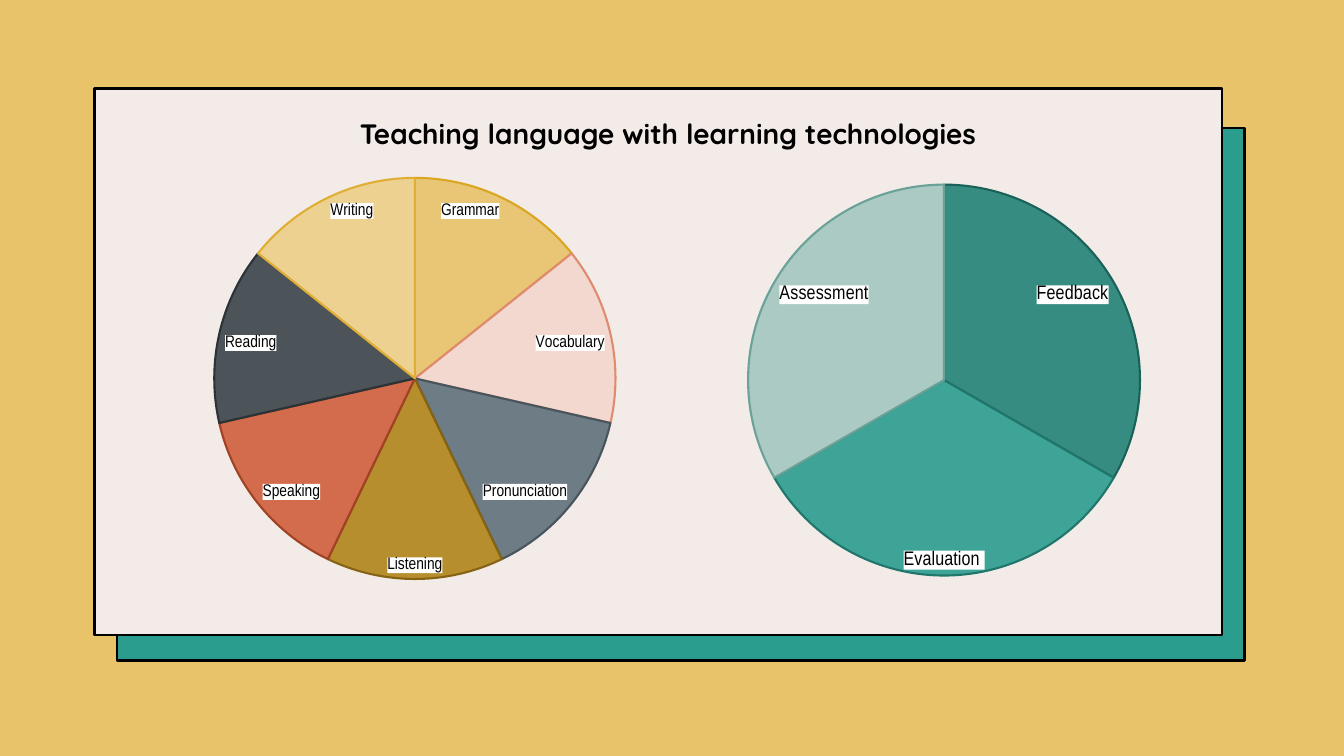
"""Build a slide with two pie charts on a shadowed card."""
import pptx
import pptx.chart.data
import pptx.dml.color
import pptx.enum.chart
import pptx.enum.shapes
import pptx.enum.text
import pptx.oxml
import pptx.oxml.ns
import pptx.util
from pptx.util import Inches

BLACK = "000000"
NARROW = "Arial Narrow"
SKILLS = [
    ("Grammar", "E9C369", "DAA520"),
    ("Vocabulary", "F3D6CD", "DE8B70"),
    ("Pronunciation", "60717C", "48555D"),
    ("Listening", "B1841A", "856314"),
    ("Speaking", "D05F3C", "A14225"),
    ("Reading", "3A444A", "2B3337"),
    ("Writing", "EDCF87", "E0AE35"),
]
STAGES = [
    ("Feedback", "238277", "1A6259"),
    ("Evaluation ", "2A9D8F", "20766B"),
    ("Assessment", "A4C7C0", "6BA297"),
]


def rgb(code):
    """Return the colour for a hex string."""
    return pptx.dml.color.RGBColor.from_string(code)


def paint(item, fill, line, width):
    """Give an item a solid fill and an outline."""
    item.fill.solid()
    item.fill.fore_color.rgb = rgb(fill)
    item.line.color.rgb = rgb(line)
    item.line.width = pptx.util.Pt(width)


def style(font, size, face, color=BLACK, bold=False):
    """Set the look of a font."""
    font.size = pptx.util.Pt(size)
    font.name = face
    font.color.rgb = rgb(color)
    font.bold = bold


def panel(slide, box, fill):
    """Add a rectangle with a black outline."""
    kind = pptx.enum.shapes.MSO_SHAPE.RECTANGLE
    shape = slide.shapes.add_shape(kind, *map(Inches, box))
    shape.shadow.inherit = False
    paint(shape, fill, BLACK, 2)


def write(slide, box, text, **look):
    """Add a text box in the given format."""
    frame = slide.shapes.add_textbox(*map(Inches, box)).text_frame
    frame.word_wrap = True
    frame.auto_size = pptx.enum.text.MSO_AUTO_SIZE.SHAPE_TO_FIT_TEXT
    run = frame.paragraphs[0].add_run()
    run.text = text
    style(run.font, **look)


def place(chart, spot):
    """Fix the inner plot area as shares of the chart."""
    area = chart._chartSpace.chart.plotArea
    for old in area.findall(pptx.oxml.ns.qn("c:layout")):
        area.remove(old)
    sizes = "".join(f'<c:{key} val="{val}"/>' for key, val in zip("xywh", spot))
    area.insert(0, pptx.oxml.parse_xml(
        f'<c:layout {pptx.oxml.ns.nsdecls("c")}><c:manualLayout>'
        '<c:layoutTarget val="inner"/><c:xMode val="edge"/><c:yMode val="edge"/>'
        f'{sizes}</c:manualLayout></c:layout>'))


def label(plot, size):
    """Show category names on white at the rim."""
    plot.has_data_labels = True
    tags = plot.data_labels
    tags.show_category_name = True
    tags.show_value = False
    tags.show_percentage = False
    tags.position = pptx.enum.chart.XL_LABEL_POSITION.INSIDE_END
    style(tags.font, size, NARROW)
    text = tags._element.find(pptx.oxml.ns.qn("c:txPr"))
    text.addprevious(pptx.oxml.parse_xml(
        f'<c:spPr {pptx.oxml.ns.nsdecls("c", "a")}><a:solidFill>'
        '<a:srgbClr val="FFFFFF"/></a:solidFill></c:spPr>'))


def pie(slide, box, parts, value, size, spot):
    """Add a pie of equal slices with named parts."""
    data = pptx.chart.data.CategoryChartData()
    data.categories = [name for name, fill, line in parts]
    data.add_series("Series 1", [value] * len(parts))
    kind = pptx.enum.chart.XL_CHART_TYPE.PIE
    chart = slide.shapes.add_chart(kind, *map(Inches, box), data).chart
    chart.has_title = False
    chart.has_legend = False
    style(chart.font, 10, NARROW)
    place(chart, spot)
    plot = chart.plots[0]
    plot.vary_by_categories = True
    label(plot, size)
    for index, (name, fill, line) in enumerate(parts):
        slice_ = plot.series[0].points[index].format
        paint(slice_, fill, line, 1.5)
        tint = slice_.fill._xPr.find(".//" + pptx.oxml.ns.qn("a:srgbClr"))
        tint.append(pptx.oxml.parse_xml(
            f'<a:alpha {pptx.oxml.ns.nsdecls("a")} val="90000"/>'))


def main():
    """Build and save the slide."""
    deck = pptx.Presentation()
    deck.slide_width, deck.slide_height = Inches(13.33), Inches(7.5)
    slide = deck.slides.add_slide(deck.slide_layouts[6])
    slide.background.fill.solid()
    slide.background.fill.fore_color.rgb = rgb("E9C369")
    panel(slide, (1.16, 1.27, 11.18, 5.28), "2A9D8F")
    panel(slide, (0.94, 0.88, 11.18, 5.42), "F3EBE8")
    pie(slide, (1.1, 1.61, 6.03, 4.29), SKILLS, 14, 12, (0.17, 0.03, 0.66, 0.94))
    pie(slide, (6.82, 1.54, 5.19, 4.18), STAGES, 33, 14, (0.02, 0.07, 0.94, 0.93))
    write(slide, (3.47, 1.11, 6.96, 0.44),
          "Teaching language with learning technologies",
          size=20, face="Quicksand", bold=True)
    deck.save("out.pptx")


if __name__ == "__main__":
    main()
